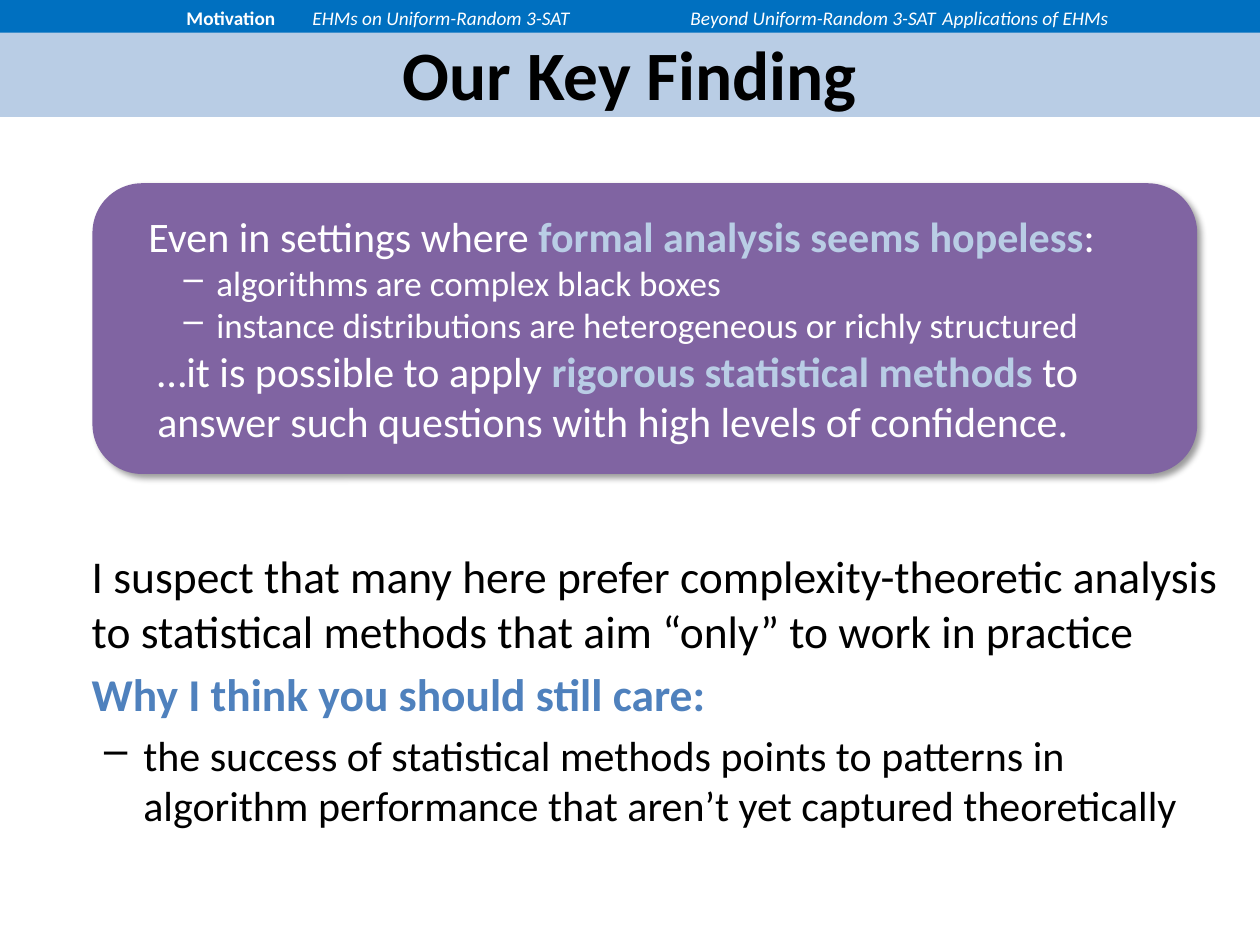
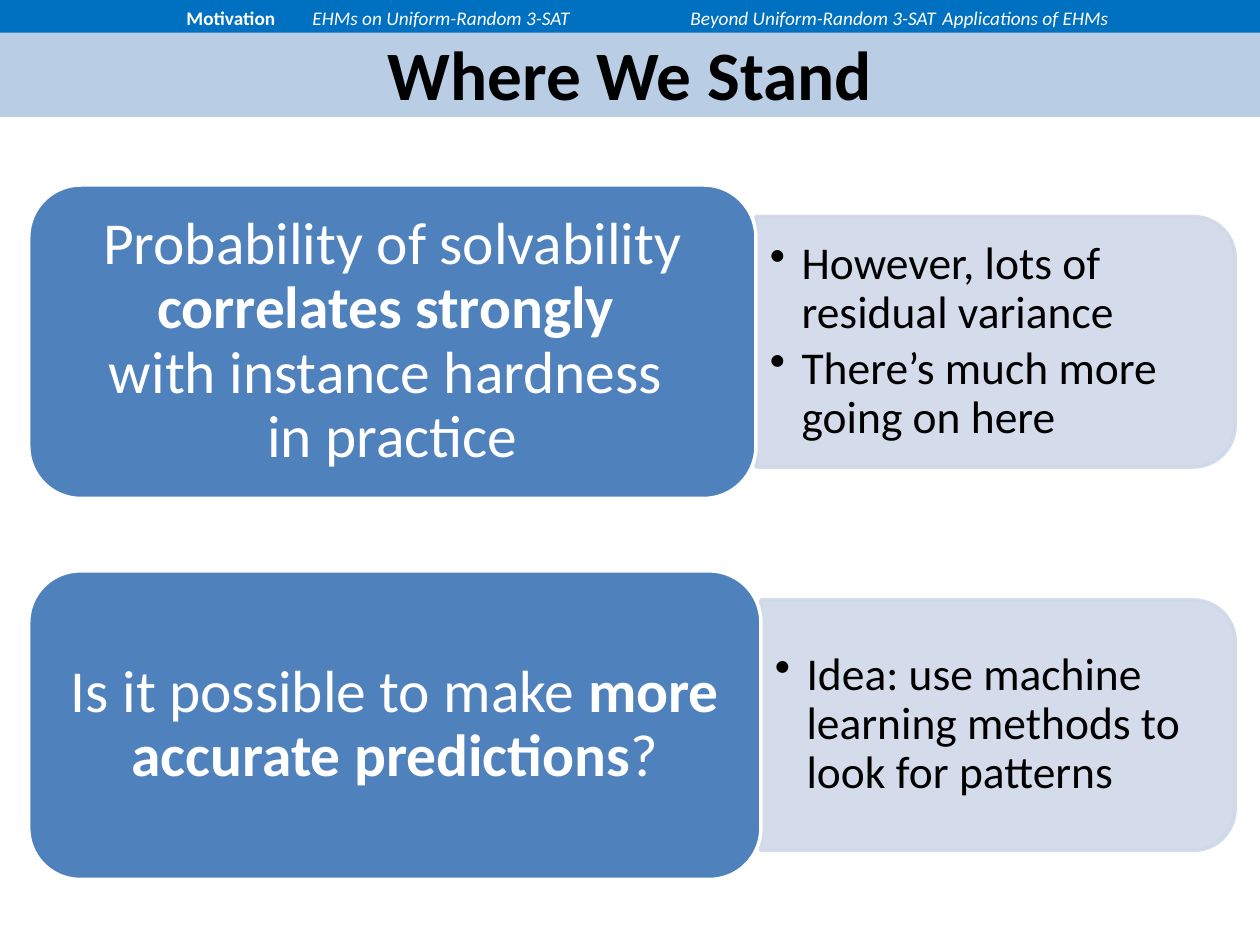
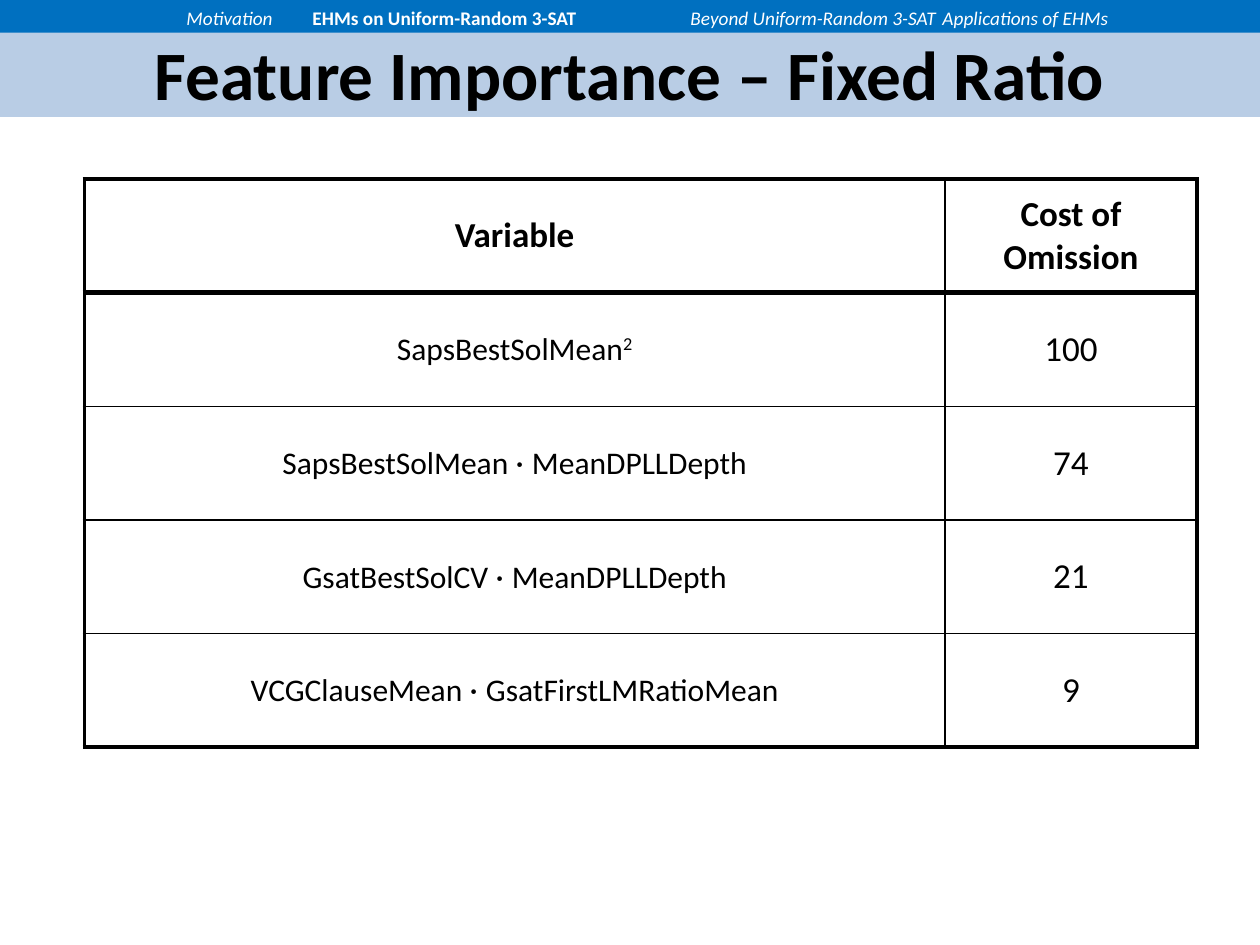
from dataclasses import dataclass

from lxml import etree
from pptx import Presentation
from pptx import util as u
from pptx.dml import color as dml
from pptx.enum import shapes, text
from pptx.oxml import ns


@dataclass(frozen=True)
class Theme:
    font: str = "Calibri"
    symbol_font: str = "Lato"
    black: str = "000000"
    white: str = "FFFFFF"
    nav: str = "0070C0"
    band: str = "B9CDE5"
    blue: str = "4F81BD"
    purple: str = "8064A2"
    panel: str = "D0D8E8"
    title_size: float = 39.6
    claim_size: float = 34
    body_size: float = 26
    detail_size: float = 24
    small_size: float = 20
    feature_size: float = 18
    nav_size: float = 11


THEME = Theme()
SECTIONS = [
    "Motivation",
    "EHMs on Uniform-Random 3-SAT",
    "Beyond Uniform-Random 3-SAT",
    "Applications of EHMs",
]
NAV_TABS = [0.97, 3.51, 6.05, 13.67, 18.75]


@dataclass
class Line:
    pieces: list
    size: float
    color: str = THEME.black
    align: text.PP_ALIGN = text.PP_ALIGN.LEFT
    left: float = 0
    hanging: float = 0
    bullet: str = ""
    before: float = 0
    spacing: float = 1.0


def add_xml(parent, tag, **attributes):
    child = etree.SubElement(parent, ns.qn(tag))
    for name, value in attributes.items():
        child.set(name, str(value))
    return child


def format_run(run, line, bold=False, italic=False, color=None, font=None, superscript=False):
    run.font.name = font or THEME.font
    run.font.size = u.Pt(line.size)
    run.font.bold = bold
    run.font.italic = italic
    run.font.color.rgb = dml.RGBColor.from_string(color or line.color)
    if superscript:
        run.font._element.set("baseline", "30000")


def write_line(paragraph, line, tabs=()):
    properties = paragraph._p.get_or_add_pPr()
    if line.left:
        properties.set("marL", str(u.Cm(line.left)))
        properties.set("indent", str(u.Cm(-line.hanging)))
    if line.bullet:
        add_xml(properties, "a:buChar", char=line.bullet)
    else:
        add_xml(properties, "a:buNone")
    if tabs:
        tab_list = add_xml(properties, "a:tabLst")
        for position in tabs:
            add_xml(tab_list, "a:tab", pos=u.Cm(position), algn="l")
    paragraph.alignment = line.align
    paragraph.line_spacing = line.spacing
    paragraph.space_before = u.Pt(line.before)
    for index, piece in enumerate(line.pieces):
        content, style = piece if isinstance(piece, tuple) else (piece, {})
        if content == "\n":
            paragraph.add_line_break()
            continue
        if index == 0:
            paragraph.text = content
        else:
            paragraph.add_run().text = content
        format_run(paragraph.runs[-1], line, **style)


def write_lines(frame, lines, anchor=text.MSO_ANCHOR.TOP, inset=(0.25, 0.13), tabs=()):
    frame.word_wrap = True
    frame.vertical_anchor = anchor
    frame.margin_left = frame.margin_right = u.Cm(inset[0])
    frame.margin_top = frame.margin_bottom = u.Cm(inset[1])
    for index, line in enumerate(lines):
        paragraph = frame.add_paragraph() if index else frame.paragraphs[0]
        write_line(paragraph, line, tabs)


def add_text(slide, box, lines, **layout):
    shape = slide.shapes.add_textbox(*map(u.Cm, box))
    write_lines(shape.text_frame, lines, **layout)


def add_filled(slide, kind, box, fill, outline=None):
    shape = slide.shapes.add_shape(kind, *map(u.Cm, box))
    shape.shadow.inherit = False
    shape.fill.solid()
    shape.fill.fore_color.rgb = dml.RGBColor.from_string(fill)
    if outline:
        shape.line.color.rgb = dml.RGBColor.from_string(outline)
        shape.line.width = u.Pt(2)
    else:
        shape.line.fill.background()
    return shape


def add_shadow(shape):
    effects = shape._element.spPr.find(ns.qn("a:effectLst"))
    shadow = add_xml(effects, "a:outerShdw", blurRad=u.Pt(4), dist=u.Pt(3),
                     dir=45 * 60000, algn="tl", rotWithShape=0)
    add_xml(add_xml(shadow, "a:srgbClr", val=THEME.black), "a:alpha", val=40000)


def add_slide(presentation, title, section):
    slide = presentation.slides.add_slide(presentation.slide_layouts[6])
    rectangle = shapes.MSO_SHAPE.RECTANGLE
    band = add_filled(slide, rectangle, (0, 0.58, 25.4, 1.78), THEME.band)
    heading = Line([(title, {"bold": True})], THEME.title_size, align=text.PP_ALIGN.CENTER)
    write_lines(band.text_frame, [heading], anchor=text.MSO_ANCHOR.MIDDLE)

    nav = add_filled(slide, rectangle, (0, 0, 25.4, 0.66), THEME.nav)
    pieces = ["\t\t"]
    for name in SECTIONS:
        active = name == section
        ending = "" if name == SECTIONS[-1] else "\t"
        pieces.append((name + ending, {"bold": active, "italic": not active}))
    write_lines(nav.text_frame, [Line(pieces, THEME.nav_size, THEME.white)], tabs=NAV_TABS)
    return slide


def add_finding(slide):
    box = add_filled(slide, shapes.MSO_SHAPE.ROUNDED_RECTANGLE, (1.9, 3.73, 22.2, 5.79),
                     THEME.purple, THEME.purple)
    add_shadow(box)
    strong = {"bold": True, "color": THEME.band}
    dash = {"left": 1.93, "hanging": 0.66, "bullet": "–"}
    write_lines(box.text_frame, [
        Line(["Even in settings where ", ("formal analysis seems hopeless", strong), ":"],
             THEME.detail_size, THEME.white, left=0.56),
        Line(["algorithms are complex black boxes"], THEME.small_size, THEME.white, **dash),
        Line(["instance distributions are heterogeneous or richly structured"],
             THEME.small_size, THEME.white, **dash),
        Line(["…it is possible to apply ", ("rigorous statistical methods ", strong),
              "to answer such questions with high levels of confidence."],
             THEME.detail_size, THEME.white, left=0.74),
    ], anchor=text.MSO_ANCHOR.MIDDLE)


def add_argument(slide):
    add_text(slide, (0.58, 10.92, 24.31, 7.92), [
        Line(["I suspect that many here prefer complexity-theoretic analysis "
              "to statistical methods that aim “only” to work in practice"],
             THEME.body_size, left=1.02),
        Line([("Why I think you should still care:", {"bold": True})],
             THEME.body_size, THEME.blue, left=1.02, before=5.2),
        Line(["the success of statistical methods points to patterns in algorithm "
              "performance that aren’t yet captured theoretically"],
             THEME.detail_size, left=2.06, hanging=0.79, bullet="–", before=4.8),
    ])


def add_claim(slide, top, width, height, claim, remarks):
    left, panel_right, panel_height = 0.58, 24.9, 5.05
    split = left + width
    middle = top + height / 2
    panel_width = panel_right - split
    panel = add_filled(
        slide, shapes.MSO_SHAPE.ROUND_2_SAME_RECTANGLE,
        (split + (panel_width - panel_height) / 2, middle - panel_width / 2,
         panel_height, panel_width),
        THEME.panel, THEME.panel)
    panel.rotation = 90
    for color in panel._element.spPr.iter(ns.qn("a:srgbClr")):
        add_xml(color, "a:alpha", val=90000)

    lines = [Line([remark], THEME.body_size, left=0.64, hanging=0.64, bullet="•",
                  before=4 if index else 0, spacing=0.9)
             for index, remark in enumerate(remarks)]
    add_text(slide, (split, middle - 2.28, panel_width - 0.24, 4.55), lines,
             anchor=text.MSO_ANCHOR.MIDDLE, inset=(0.28, 0.13))

    box = add_filled(slide, shapes.MSO_SHAPE.ROUNDED_RECTANGLE, (left, top, width, height),
                     THEME.blue, THEME.white)
    write_lines(box.text_frame,
                [Line(claim, THEME.claim_size, THEME.white, text.PP_ALIGN.CENTER, spacing=0.9)],
                anchor=text.MSO_ANCHOR.MIDDLE, inset=(0.36, 0.18))


def set_borders(cell, widths):
    properties = cell._tc.get_or_add_tcPr()
    for side, width in zip("LRTB", widths):
        border = add_xml(properties, "a:ln" + side, w=u.Pt(width))
        add_xml(add_xml(border, "a:solidFill"), "a:srgbClr", val=THEME.black)


def add_grid(slide, left, top, columns, row_height, rows):
    frame = slide.shapes.add_table(len(rows), len(columns), u.Cm(left), u.Cm(top),
                                   u.Cm(sum(columns)), u.Cm(row_height * len(rows)))
    table = frame.table
    table.first_row = table.horz_banding = False
    for column, width in zip(table.columns, columns):
        column.width = u.Cm(width)
    vertical = [2.25, 1, 2.25]
    horizontal = [2.25, 3] + [1] * (len(rows) - 2) + [2.25]
    for r, row in enumerate(rows):
        table.rows[r].height = u.Cm(row_height)
        for c, line in enumerate(row):
            cell = table.cell(r, c)
            set_borders(cell, vertical[c:c + 2] + horizontal[r:r + 2])
            cell.fill.background()
            cell.vertical_anchor = text.MSO_ANCHOR.MIDDLE
            write_line(cell.text_frame.paragraphs[0], line)


def add_importance_table(slide):
    center = text.PP_ALIGN.CENTER
    dot = ("· ", {"font": THEME.symbol_font})
    features = [
        (["SapsBestSolMean", ("2", {"superscript": True})], 100),
        (["SapsBestSolMean ", dot, "MeanDPLLDepth"], 74),
        (["GsatBestSolCV ", dot, "MeanDPLLDepth"], 21),
        (["VCGClauseMean ", dot, "GsatFirstLMRatioMean"], 9),
    ]
    rows = [[Line([(name, {"bold": True})], THEME.small_size, align=center)
             for name in ("Variable", "Cost of Omission")]]
    for pieces, cost in features:
        rows.append([Line(pieces, THEME.feature_size, align=center),
                     Line([str(cost)], THEME.small_size, align=center)])
    add_grid(slide, 1.7, 3.61, [17.35, 5.08], 2.29, rows)


def main():
    presentation = Presentation()
    presentation.slide_width = u.Cm(25.4)
    presentation.slide_height = u.Cm(19.05)
    strong = {"bold": True}

    slide = add_slide(presentation, "Our Key Finding", SECTIONS[0])
    add_argument(slide)
    add_finding(slide)

    slide = add_slide(presentation, "Where We Stand", SECTIONS[0])
    add_claim(slide, 3.73, 14.66, 6.32,
              ["Probability of solvability ", ("correlates strongly ", strong), "\n",
               "with instance hardness ", "\n", "in practice"],
              ["However, lots of residual variance", "There’s much more going on here"])
    add_claim(slide, 11.51, 14.76, 6.22,
              ["Is it possible to make ", ("more accurate predictions", strong), "?"],
              ["Idea: use machine learning methods to look for patterns"])

    slide = add_slide(presentation, "Feature Importance – Fixed Ratio", SECTIONS[1])
    add_importance_table(slide)

    presentation.save("out.pptx")


if __name__ == "__main__":
    main()
